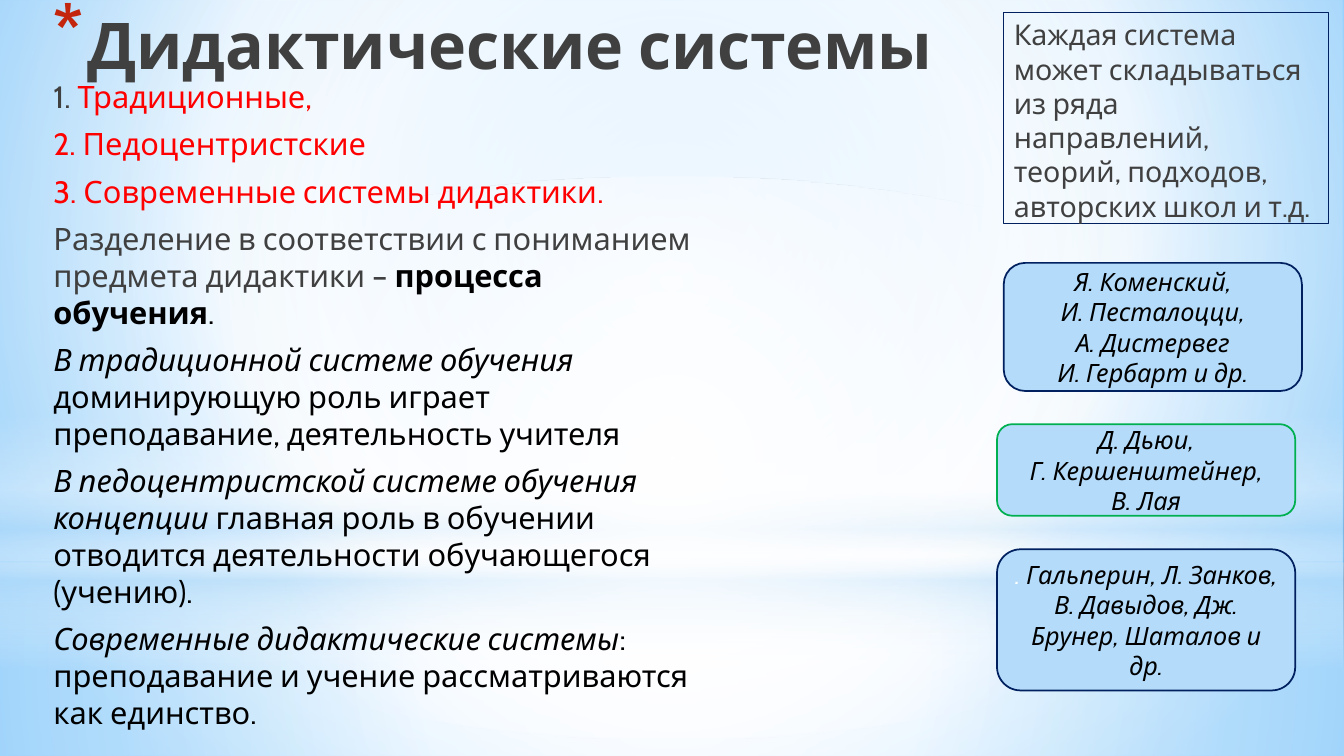
"""Builds a slide on didactic systems with their authors."""
from dataclasses import dataclass
from typing import Any, NamedTuple, Optional

from lxml import etree
from pptx import Presentation
from pptx import util as u
from pptx.dml import color as dml
from pptx.enum import shapes, text
from pptx.oxml import ns

COLUMNS, ROWS = 160, 90
CELL = u.Inches(1 / 12)


@dataclass(frozen=True)
class Theme:
    """Colours, font and type sizes of the slide."""
    font: str = "Cabin"
    grey: str = "404040"
    black: str = "000000"
    white: str = "FFFFFF"
    red: str = "FF0000"
    navy: str = "002060"
    green: str = "00B050"
    sky: str = "B4DCFA"
    bullet: str = "C3260C"
    title: float = 46
    body: float = 22
    remark: float = 20.4
    authors: float = 18


THEME = Theme()


class Box(NamedTuple):
    """A place on the grid."""
    left: float
    top: float
    width: float
    height: float


class Span(NamedTuple):
    """A stretch of evenly formatted text."""
    words: str
    color: str = THEME.black
    bold: bool = False
    italic: bool = False


class Stop(NamedTuple):
    """A gradient stop, in percent."""
    position: int
    color: str
    alpha: int = 100


class Gradient(NamedTuple):
    """A gradient, circular around a focus or else vertical."""
    stops: list[Stop]
    focus: Optional[tuple[int, int, int, int]] = None


class Glow(NamedTuple):
    """A soft light of the backdrop."""
    box: Box
    gradient: Gradient
    kind: shapes.MSO_SHAPE = shapes.MSO_SHAPE.RECTANGLE


class Authors(NamedTuple):
    """A card with the authors of one system."""
    box: Box
    outline: str
    lines: list[list[Span]]


CENTRE = (50, 50, 50, 50)
W, S = THEME.white, THEME.sky
SKY = Gradient([Stop(0, "9ED5FF"), Stop(60, W), Stop(100, "5BB9FF")], (20, 10, 20, 60))
TITLE_INK = Gradient([Stop(0, THEME.black), Stop(40, THEME.grey), Stop(100, "212745", 65)])
GLOWS = [
    Glow(Box(0, 67, COLUMNS, 23),
         Gradient([Stop(0, W, 91), Stop(37, W, 76), Stop(100, S, 79)], CENTRE)),
    Glow(Box(0, 0, COLUMNS, 67),
         Gradient([Stop(0, W, 89), Stop(48, W, 62), Stop(100, S, 79)], CENTRE)),
    Glow(Box(0, 49.5, COLUMNS, 30),
         Gradient([Stop(0, W, 0), Stop(29, W, 30), Stop(45, S, 40),
                   Stop(55, W, 26), Stop(65, S, 60), Stop(100, W, 0)])),
    Glow(Box(0, 21, COLUMNS, 67),
         Gradient([Stop(0, W), Stop(56, W, 0)], CENTRE), shapes.MSO_SHAPE.OVAL),
]
SYSTEMS = [
    [Span("1. ", THEME.grey), Span("Традиционные,", THEME.red)],
    [Span("2. Педоцентристские", THEME.red)],
    [Span("3. Современные системы дидактики.", THEME.red)],
    [Span("Разделение в соответствии с пониманием предмета дидактики – ", THEME.grey),
     Span("процесса обучения", bold=True), Span(".")],
    [Span("В традиционной системе обучения ", italic=True),
     Span("доминирующую роль играет преподавание, деятельность учителя")],
    [Span("В педоцентристской системе обучения концепции ", italic=True),
     Span("главная роль в обучении отводится деятельности обучающегося (учению).")],
    [Span("Современные дидактические системы", italic=True),
     Span(": преподавание и учение рассматриваются как единство.")],
]
REMARK = [[Span("Каждая система может складываться из ряда направлений, теорий, "
                "подходов, авторских школ и т.д.", THEME.grey)]]
CARDS = [
    Authors(Box(119.5, 31.3, 35.5, 15.25), THEME.navy,
            [[Span(name, italic=True)] for name in
             ("Я. Коменский,", "И. Песталоцци,", "А. Дистервег", "И. Гербарт и др.")]),
    Authors(Box(118.7, 50.5, 35.5, 10.9), THEME.green,
            [[Span(name, italic=True)] for name in
             ("Д. Дьюи,", "Г. Кершенштейнер,", "В. Лая")]),
    Authors(Box(118.7, 65.4, 35.5, 16.8), THEME.navy,
            [[Span(". ", THEME.white, italic=True),
              Span("Гальперин, Л. Занков, В. Давыдов, Дж. Брунер, Шаталов и др.",
                   italic=True)]]),
]


def assign(target: Any, values: dict[str, Any]) -> None:
    """Set the attributes given by a dict of format values."""
    for key, value in values.items():
        setattr(target, key, value)


def place(box: Box) -> dict[str, int]:
    """Turn a grid box into lengths."""
    return {key: round(cells * CELL) for key, cells in box._asdict().items()}


def child(parent: Any, tag: str, **attributes: Any) -> Any:
    """Append a drawing element."""
    return etree.SubElement(parent, ns.qn(f"a:{tag}"),
                            {key: str(value) for key, value in attributes.items()})


def blend(fill: Any, holder: Any, gradient: Gradient) -> None:
    """Give a fill its gradient."""
    fill.gradient()
    node = next(holder.iter(ns.qn("a:gradFill")))
    for part in list(node):
        node.remove(part)
    stops = child(node, "gsLst")
    for stop in gradient.stops:
        tint = child(child(stops, "gs", pos=stop.position * 1000), "srgbClr", val=stop.color)
        if stop.alpha < 100:
            child(tint, "alpha", val=stop.alpha * 1000)
    if gradient.focus:
        sides = {side: share * 1000 for side, share in zip("ltrb", gradient.focus)}
        child(child(node, "path", path="circle"), "fillToRect", **sides)
    else:
        child(node, "lin", ang=5400000, scaled=0)


def outline(shape: Any, color: str, width: float) -> None:
    """Draw the border of a shape."""
    shape.line.color.rgb = dml.RGBColor.from_string(color)
    shape.line.width = u.Pt(width)


def write(shape: Any, lines: list[list[Span]], size: float, layout: dict[str, Any],
          anchor: text.MSO_ANCHOR = text.MSO_ANCHOR.TOP) -> None:
    """Fill a shape with formatted paragraphs."""
    frame = shape.text_frame
    assign(frame, {"word_wrap": True, "auto_size": text.MSO_AUTO_SIZE.NONE,
                   "vertical_anchor": anchor})
    for index, spans in enumerate(lines):
        paragraph = frame.add_paragraph() if index else frame.paragraphs[0]
        assign(paragraph, layout)
        for span in spans:
            run = paragraph.add_run()
            run.text = span.words
            assign(run.font, {"name": THEME.font, "size": u.Pt(size),
                              "bold": span.bold, "italic": span.italic})
            run.font.color.rgb = dml.RGBColor.from_string(span.color)


def write_list(body: Any, box: Box, lines: list[list[Span]], size: float, after: float) -> None:
    """Place a body placeholder and write its paragraphs without bullets."""
    assign(body, place(box))
    write(body, lines, size, {"space_before": u.Pt(size * 0.2), "space_after": u.Pt(after)})
    for paragraph in body.text_frame.paragraphs:
        properties = paragraph._p.get_or_add_pPr()
        properties.set("marL", "0")
        properties.set("indent", "0")
        child(properties, "buNone")


def write_title(title: Any) -> None:
    """Write the heading with its asterisk."""
    assign(title, place(Box(5, 0, 126, 14)))
    write(title, [[Span("Дидактические системы", bold=True)]], THEME.title,
          {"alignment": text.PP_ALIGN.LEFT})
    paragraph = title.text_frame.paragraphs[0]
    heading = paragraph.runs[0]
    blend(heading.font.fill, heading._r, TITLE_INK)
    properties = paragraph._p.get_or_add_pPr()
    hang = u.Inches(0.35)
    properties.set("marL", str(hang))
    properties.set("indent", str(-hang))
    child(child(properties, "buClr"), "srgbClr", val=THEME.bullet)
    child(properties, "buSzPct", val=128000)
    child(properties, "buChar", char="*")


def draw_glow(slide: Any, glow: Glow, depth: int) -> None:
    """Draw a light behind the text."""
    light = slide.shapes.add_shape(glow.kind, *place(glow.box).values())
    light.shadow.inherit = False
    light.line.fill.background()
    blend(light.fill, light._element, glow.gradient)
    slide.shapes._spTree.insert(2 + depth, light._element)


def draw_card(slide: Any, authors: Authors) -> None:
    """Draw a rounded card of authors."""
    card = slide.shapes.add_shape(shapes.MSO_SHAPE.ROUNDED_RECTANGLE,
                                  *place(authors.box).values())
    card.shadow.inherit = False
    card.fill.solid()
    card.fill.fore_color.rgb = dml.RGBColor.from_string(THEME.sky)
    outline(card, authors.outline, 1.25)
    write(card, authors.lines, THEME.authors, {"alignment": text.PP_ALIGN.CENTER},
          text.MSO_ANCHOR.MIDDLE)


def main() -> None:
    """Build and save the slide."""
    deck = Presentation()
    assign(deck, {"slide_width": COLUMNS * CELL, "slide_height": ROWS * CELL})
    slide = deck.slides.add_slide(deck.slide_layouts[3])
    blend(slide.background.fill, slide._element, SKY)
    title, systems, remark = slide.placeholders
    for depth, glow in enumerate(GLOWS):
        draw_glow(slide, glow, depth)
    write_title(title)
    write_list(systems, Box(5.16, 8.64, 79, 45.25), SYSTEMS, THEME.body, 3)
    write_list(remark, Box(119.5, 1.44, 38.65, 25.2), REMARK, THEME.remark, 0)
    outline(remark, THEME.navy, 0.75)
    for authors in CARDS:
        draw_card(slide, authors)
    deck.save("out.pptx")


if __name__ == "__main__":
    main()
